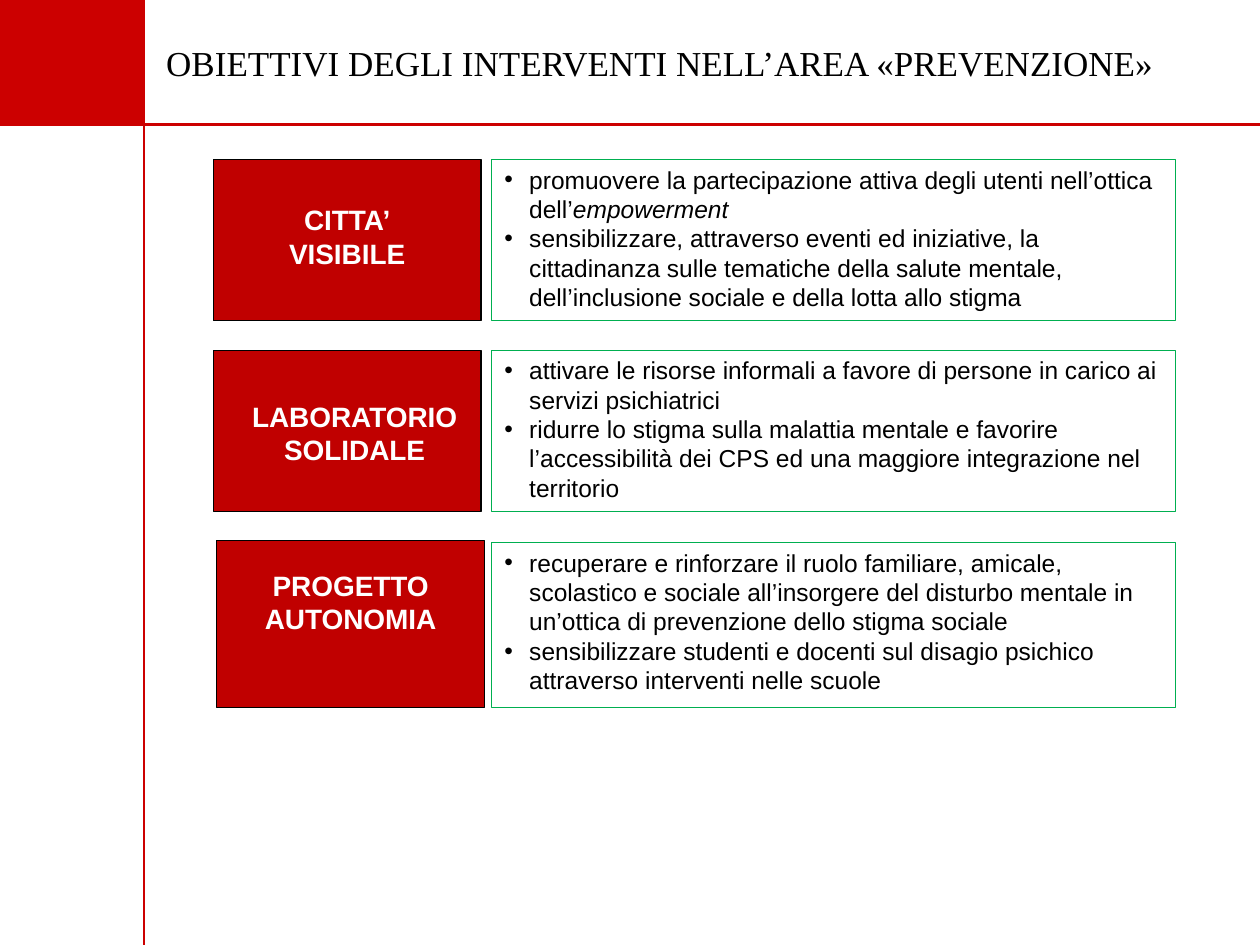
import pptx
import pptx.dml.color
import pptx.enum.shapes
import pptx.enum.text
import pptx.oxml
import pptx.oxml.ns
import pptx.util

Cm, Pt = pptx.util.Cm, pptx.util.Pt
ALIGN = pptx.enum.text.PP_ALIGN
ANCHOR = pptx.enum.text.MSO_ANCHOR
RECT = pptx.enum.shapes.MSO_SHAPE.RECTANGLE
STRAIGHT = pptx.enum.shapes.MSO_CONNECTOR.STRAIGHT
NS = pptx.oxml.ns.nsdecls("a")

WIDTH, HEIGHT = 25.4, 19.05
SIDE, HEAD = 2.9, 2.51
RED, DARK_RED, GREEN, BLACK, WHITE = "CC0000", "C00000", "00AF50", "000000", "FFFFFF"
TITLE = "OBIETTIVI DEGLI INTERVENTI NELL’AREA «PREVENZIONE»"
ITALIC = "empowerment"

ROWS = [
    {"label": "CITTA’\vVISIBILE", "at": (4.3, 3.22, 5.4, 3.25), "insets": (0, 0, 0, 0.15),
     "top": 3.22, "height": 3.25, "goals": [
         "promuovere la partecipazione attiva degli utenti nell’ottica dell’empowerment",
         "sensibilizzare, attraverso eventi ed iniziative, la cittadinanza sulle tematiche "
         "della salute mentale, dell’inclusione sociale e della lotta allo stigma"]},
    {"label": "LABORATORIO\nSOLIDALE", "at": (4.3, 7.06, 5.4, 3.25), "insets": (0.3, 0.1, 0, 0),
     "top": 7.06, "height": 3.25, "goals": [
         "attivare le risorse informali a favore di persone in carico ai servizi psichiatrici",
         "ridurre lo stigma sulla malattia mentale e favorire l’accessibilità dei CPS "
         "ed una maggiore integrazione nel territorio"]},
    {"label": "PROGETTO\nAUTONOMIA", "at": (4.37, 10.9, 5.4, 3.36), "insets": (0, 0, 0, 0.88),
     "top": 10.94, "height": 3.33, "goals": [
         "recuperare e rinforzare il ruolo familiare, amicale, scolastico e sociale "
         "all’insorgere del disturbo mentale in un’ottica di prevenzione dello stigma sociale",
         "sensibilizzare studenti e docenti sul disagio psichico attraverso interventi "
         "nelle scuole"]},
]


def color(target, value):
    if hasattr(target, "solid"):
        target.solid()
        target = target.fore_color
    target.rgb = pptx.dml.color.RGBColor.from_string(value)


def set_insets(tf, left, top, right, bottom):
    tf.margin_left, tf.margin_top = Cm(left), Cm(top)
    tf.margin_right, tf.margin_bottom = Cm(right), Cm(bottom)
    tf.word_wrap = True


def format_runs(p, size, font, value, bold=False):
    for r in p.runs:
        r.font.size, r.font.name, r.font.bold = Pt(size), font, bold
        color(r.font.color, value)


def add_box(at, fill=None, line=None):
    sp = slide.shapes.add_shape(RECT, *map(Cm, at))
    sp.shadow.inherit = False
    if fill:
        color(sp.fill, fill)
    else:
        sp.fill.background()
    if line:
        color(sp.line.fill, line)
        sp.line.width = Pt(0.72)
    else:
        sp.line.fill.background()
    return sp


def add_rule(*ends):
    rule = slide.shapes.add_connector(STRAIGHT, *map(Cm, ends))
    color(rule.line.fill, RED)
    rule.line.width = Pt(1.5)
    rule._element.spPr.append(pptx.oxml.parse_xml(f"<a:effectLst {NS}/>"))


def add_bullet(p):
    pPr = p._p.get_or_add_pPr()
    pPr.set("marL", str(Cm(0.76)))
    pPr.set("indent", str(-Cm(0.5)))
    for tag in ('buFont %s typeface="Arial"', 'buChar %s char="•"'):
        pPr.append(pptx.oxml.parse_xml(f"<a:{tag % NS}/>"))


def add_label(row):
    tf = add_box(row["at"], DARK_RED, BLACK).text_frame
    tf.text = row["label"]
    tf.vertical_anchor = ANCHOR.MIDDLE
    set_insets(tf, *row["insets"])
    for p in tf.paragraphs:
        p.alignment = ALIGN.CENTER
        p.line_spacing = Pt(19)
        format_runs(p, 16, "Arial", WHITE, True)


def add_goals(row):
    tf = add_box((9.91, row["top"], 13.79, row["height"]), line=GREEN).text_frame
    tf.vertical_anchor = ANCHOR.TOP
    set_insets(tf, 0, 0.1, 0.13, 0)
    for i, goal in enumerate(row["goals"]):
        p = tf.add_paragraph() if i else tf.paragraphs[0]
        p.alignment = ALIGN.LEFT
        p.line_spacing = Pt(16.8)
        add_bullet(p)
        for part in filter(None, goal.partition(ITALIC)):
            r = p.add_run()
            r.text = part
            r.font.italic = part == ITALIC
        format_runs(p, 14, "Arial", BLACK)


prs = pptx.Presentation()
prs.slide_width, prs.slide_height = Cm(WIDTH), Cm(HEIGHT)
slide = prs.slides.add_slide(prs.slide_layouts[5])

add_box((0, 0, SIDE, HEAD), RED)
add_rule(0, HEAD, WIDTH, HEAD)
add_rule(SIDE, HEIGHT, SIDE, 0)

title = slide.shapes.title
title.left, title.top, title.width, title.height = map(Cm, (3.3, 0.33, 21.59, 1.37))
tf = title.text_frame
tf.text = TITLE
tf.auto_size = pptx.enum.text.MSO_AUTO_SIZE.NONE
tf.vertical_anchor = ANCHOR.MIDDLE
set_insets(tf, 0.05, 0.49, 0, 0)
tf.paragraphs[0].alignment = ALIGN.LEFT
format_runs(tf.paragraphs[0], 20, "Times New Roman", BLACK)

for row in ROWS:
    add_label(row)
    add_goals(row)

prs.save("out.pptx")
